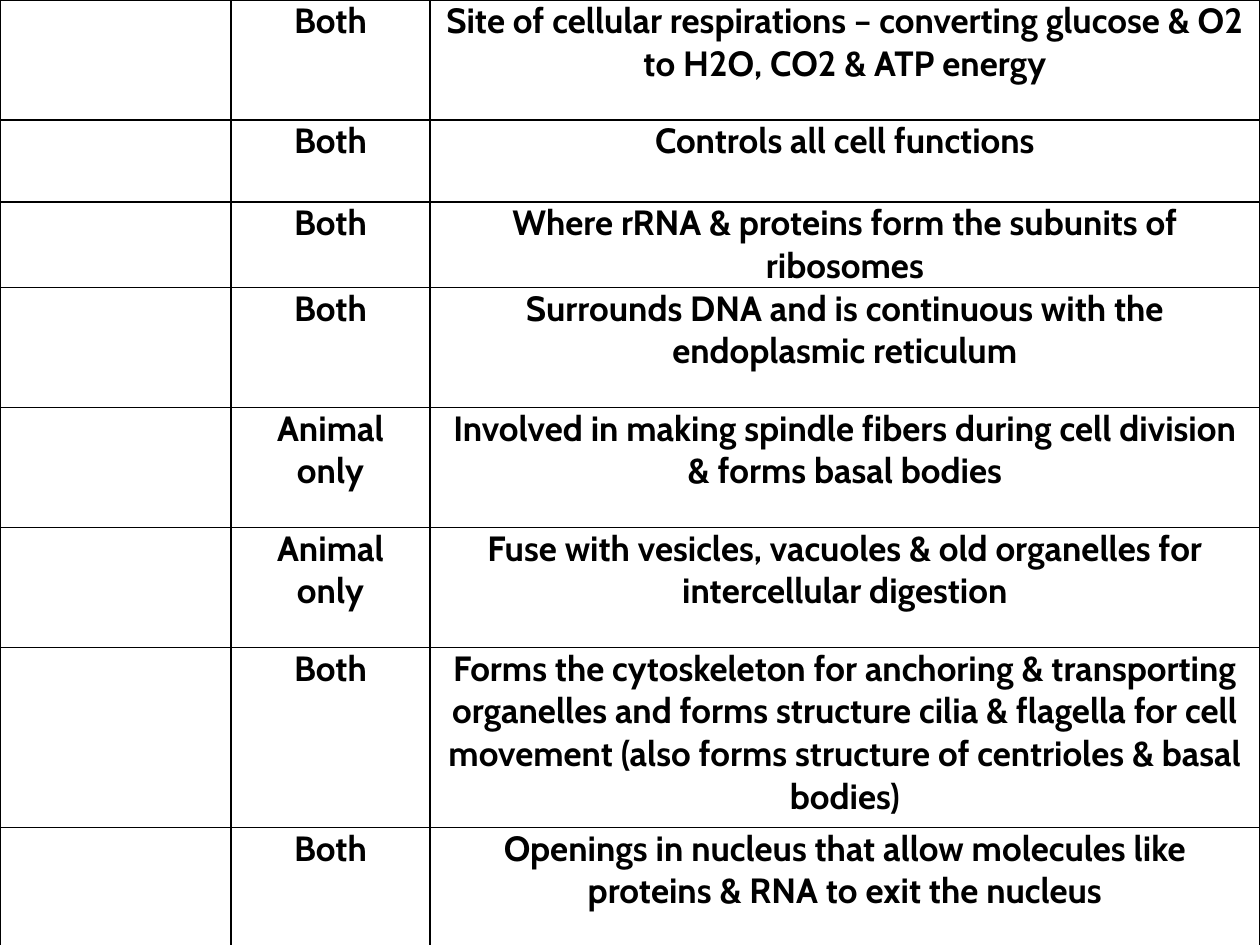
"""Build a slide with a table of organelle occurrence and function."""
from dataclasses import dataclass

from lxml import etree
from pptx import Presentation
from pptx import util as u
from pptx.dml.color import RGBColor
from pptx.enum import text
from pptx.oxml import ns
from pptx.table import Table, _Cell

EMU_PER_PX = 914400 / 126
COLORS = {"ink": "000000"}
FONT = "Cabin"
COLUMN_WIDTHS = (231, 199, 830)
SIDE_MARGIN = 9


@dataclass(frozen=True)
class Organelle:
    found_in: str
    function: str
    height: int = 120


ORGANELLES = (
    Organelle("Both", "Site of cellular respirations – converting glucose & O2 to H2O, CO2 & ATP energy"),
    Organelle("Both", "Controls all cell functions", 82),
    Organelle("Both", "Where rRNA & proteins form the subunits of ribosomes", 82),
    Organelle("Both", "Surrounds DNA and is continuous with the endoplasmic reticulum"),
    Organelle("Animal only", "Involved in making spindle fibers during cell division & forms basal bodies"),
    Organelle("Animal only", "Fuse with vesicles, vacuoles & old organelles for intercellular digestion"),
    Organelle(
        "Both",
        "Forms the cytoskeleton for anchoring & transporting organelles and forms structure "
        "cilia & flagella for cell movement (also forms structure of centrioles & basal bodies)",
        180,
    ),
    Organelle("Both", "Openings in nucleus that allow molecules like proteins & RNA to exit the nucleus"),
)


def px(length: int) -> u.Emu:
    return u.Emu(round(length * EMU_PER_PX))


def add_borders(cell: _Cell) -> None:
    properties = cell._tc.get_or_add_tcPr()
    for position, side in enumerate(("lnL", "lnR", "lnT", "lnB")):
        border = etree.Element(ns.qn(f"a:{side}"), w=str(u.Pt(1)))
        fill = etree.SubElement(border, ns.qn("a:solidFill"))
        etree.SubElement(fill, ns.qn("a:srgbClr"), val=COLORS["ink"])
        properties.insert(position, border)


def write_cell(cell: _Cell, wording: str) -> None:
    cell.margin_left = cell.margin_right = px(SIDE_MARGIN)
    cell.margin_top = cell.margin_bottom = 0
    cell.fill.background()
    add_borders(cell)
    if not wording:
        return
    paragraph = cell.text_frame.paragraphs[0]
    paragraph.alignment = text.PP_ALIGN.CENTER
    run = paragraph.add_run()
    run.text = wording
    run.font.name = FONT
    run.font.size = u.Pt(20)
    run.font.bold = True
    run.font.color.rgb = RGBColor.from_string(COLORS["ink"])


def fill_table(table: Table) -> None:
    table.first_row = table.horz_banding = False
    for column, width in zip(table.columns, COLUMN_WIDTHS):
        column.width = px(width)
    for row, organelle in zip(table.rows, ORGANELLES):
        row.height = px(organelle.height)
        for cell, wording in zip(row.cells, ("", organelle.found_in, organelle.function)):
            write_cell(cell, wording)


def main() -> None:
    deck = Presentation()
    deck.slide_width, deck.slide_height = px(1260), px(945)
    slide = deck.slides.add_slide(deck.slide_layouts[6])
    total_height = sum(organelle.height for organelle in ORGANELLES)
    frame = slide.shapes.add_table(
        len(ORGANELLES), len(COLUMN_WIDTHS), 0, 0, px(sum(COLUMN_WIDTHS)), px(total_height)
    )
    fill_table(frame.table)
    deck.save("out.pptx")


if __name__ == "__main__":
    main()
